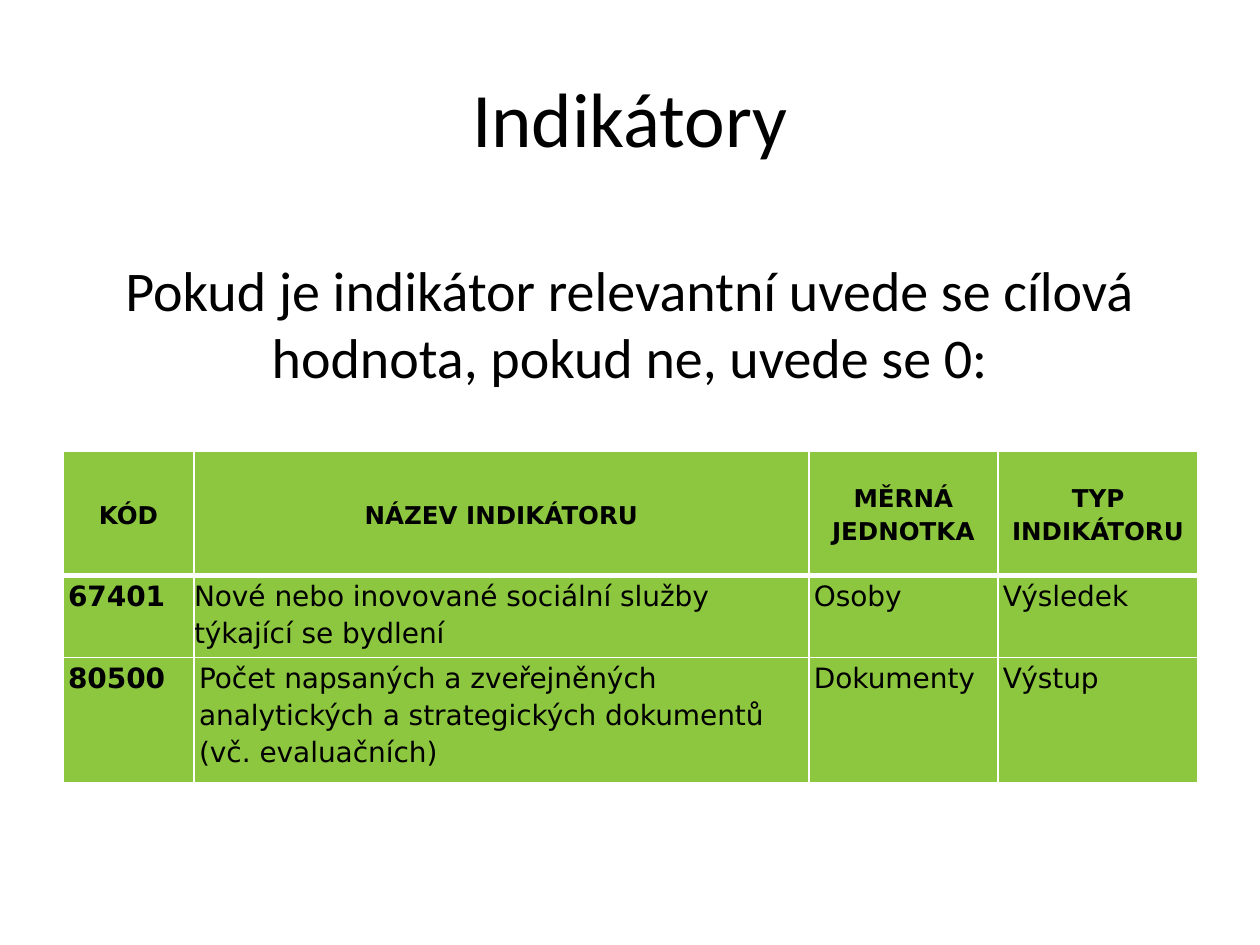
from pptx import Presentation
from pptx import util as u
from pptx.dml.color import RGBColor
from pptx.enum import text
from pptx.oxml import parse_xml
from pptx.oxml.ns import nsdecls

BLACK, WHITE, GREEN = "000000", "FFFFFF", "8DC63F"
COLUMNS = [1.04, 4.88, 1.5, 1.59]
ROWS = [0.99, 0.65, 0.99]
INDICATORS = [
    ["KÓD", "NÁZEV INDIKÁTORU", "MĚRNÁ JEDNOTKA", "TYP INDIKÁTORU"],
    ["67401", "Nové nebo inovované sociální služby týkající se bydlení",
     "Osoby", "Výsledek"],
    ["80500", "Počet napsaných a zveřejněných analytických a strategických "
     "dokumentů (vč. evaluačních)", "Dokumenty", "Výstup"],
]


def color(value):
    return RGBColor.from_string(value)


def set_font(p, name, size, bold=False):
    p.font.name = name
    p.font.size = u.Pt(size)
    p.font.bold = bold
    p.font.color.rgb = color(BLACK)


def add_text(s, box, words, size, anchor):
    sp = s.shapes.add_textbox(*map(u.Inches, box))
    tf = sp.text_frame
    tf.word_wrap = True
    tf.vertical_anchor = anchor
    p = tf.paragraphs[0]
    p.text = words
    p.alignment = text.PP_ALIGN.CENTER
    set_font(p, "Calibri", size)


def set_borders(cell, top, bottom):
    """White borders; the side lines are always 1 pt."""
    tc_pr = cell._tc.get_or_add_tcPr()
    for side, width in zip("LRTB", (1, 1, top, bottom)):
        tc_pr.append(parse_xml(
            f'<a:ln{side} {nsdecls("a")} w="{u.Pt(width)}"><a:solidFill>'
            f'<a:srgbClr val="{WHITE}"/></a:solidFill></a:ln{side}>'))


def fill_cell(cell, words, row, col):
    header = row == 0
    set_borders(cell, top=3 if row == 1 else 1, bottom=3 if header else 1)
    cell.fill.solid()
    cell.fill.fore_color.rgb = color(GREEN)
    cell.margin_left = cell.margin_right = 0
    cell.margin_top = cell.margin_bottom = 0
    cell.vertical_anchor = (text.MSO_ANCHOR.MIDDLE if header
                            else text.MSO_ANCHOR.TOP)
    p = cell.text_frame.paragraphs[0]
    p.text = words
    p.alignment = text.PP_ALIGN.CENTER if header else text.PP_ALIGN.LEFT
    p.line_spacing = 1.15
    set_font(p, "DejaVu Sans", 14 if header else 16, header or col == 0)
    flush = (row, col) == (1, 1)
    if not flush:
        p.space_before = p.space_after = u.Pt(3)
    if not header and not flush:
        p._p.get_or_add_pPr().set("marL", str(u.Inches(0.04)))


def add_indicator_table(s, left, top):
    box = map(u.Inches, (left, top, sum(COLUMNS), sum(ROWS)))
    table = s.shapes.add_table(len(ROWS), len(COLUMNS), *box).table
    for column, width in zip(table.columns, COLUMNS):
        column.width = u.Inches(width)
    for r, (height, values) in enumerate(zip(ROWS, INDICATORS)):
        table.rows[r].height = u.Inches(height)
        for c, words in enumerate(values):
            fill_cell(table.cell(r, c), words, r, c)


def main():
    prs = Presentation()
    prs.slide_width, prs.slide_height = u.Inches(10), u.Inches(7.5)
    s = prs.slides.add_slide(prs.slide_layouts[6])
    margin, width = 0.5, 9
    add_text(s, (margin, 0.3, width, 1.25), "Indikátory", 44,
             text.MSO_ANCHOR.MIDDLE)
    add_indicator_table(s, margin, 3.58)
    add_text(s, (margin, 1.98, width, 1.18),
             "Pokud je indikátor relevantní uvede se cílová hodnota, "
             "pokud ne, uvede se 0:", 32, text.MSO_ANCHOR.TOP)
    prs.save("out.pptx")


if __name__ == "__main__":
    main()
